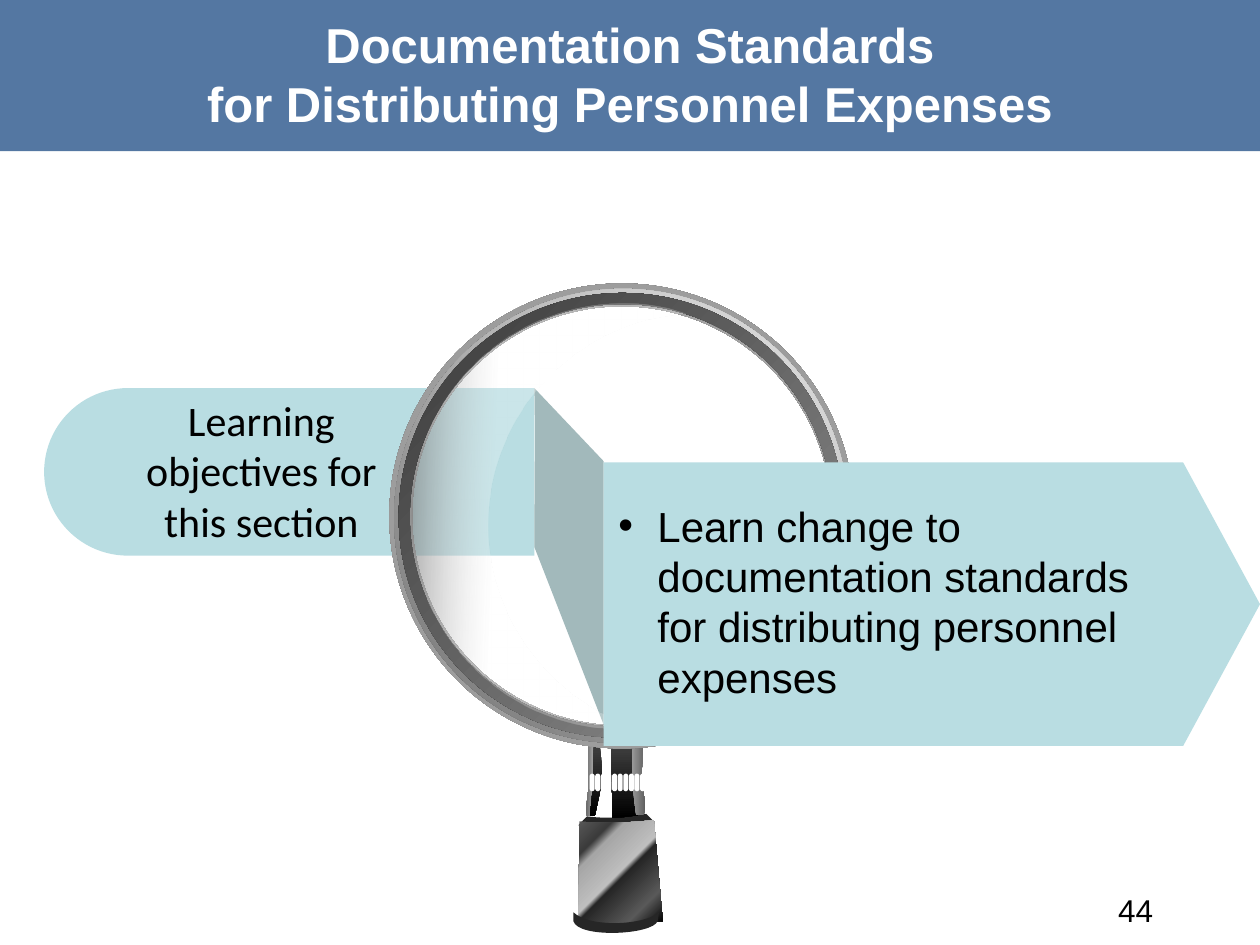
from dataclasses import dataclass
from typing import NamedTuple

from lxml import etree
from pptx import Presentation
from pptx import util as u
from pptx.dml import color
from pptx.enum import shapes, text
from pptx.oxml import ns

KIND = shapes.MSO_SHAPE
ALIGN = text.PP_ALIGN
ANCHOR = text.MSO_ANCHOR
GRID = 1000


@dataclass(frozen=True)
class Theme:
    banner: str = "376092"
    panel: str = "B9DDE2"
    fold: str = "A2B9BB"
    cap: str = "262626"
    white: str = "FFFFFF"
    ink: str = "000000"
    sans: str = "Arial"
    label: str = "Calibri"
    head: int = 28
    body: int = 24
    small: int = 18


class Stop(NamedTuple):
    pos: int
    tone: str
    alpha: int = 100


class Fade(NamedTuple):
    stops: tuple
    angle: float = 0
    focus: tuple = ()


class Box(NamedTuple):
    left: float
    top: float
    width: float
    height: float


class Ring(NamedTuple):
    box: Box
    band: float
    fill: Fade


class Part(NamedTuple):
    start: tuple
    steps: tuple
    fill: object


class Label(NamedTuple):
    words: str
    box: Box
    size: int
    face: str
    tone: str
    align: object
    anchor: object = ANCHOR.TOP
    bold: bool = False
    grow: bool = False
    bullet: bool = False


T = Theme()
DARK = Fade((Stop(0, "404040"), Stop(100, "000000")), 90)
STEEL = Fade((Stop(0, "595959"), Stop(19, "3B3B3B"), Stop(26, "A6A6A6"), Stop(50, "BFBFBF"),
              Stop(54, "262626"), Stop(81, "595959"), Stop(100, "000000")), 45)

FOLD = Part((4.24, 3.08), ((4.79, 3.66), (4.79, 5.75), (4.24, 4.34),
                           (4.24, 4.11, 4.25, 3.31, 4.24, 3.08)), T.fold)
HANDLE = (
    Part((4.66, 6.48), ((4.82, 6.5, 4.94, 6.49, 5.13, 6.46), (5.16, 6.49, 5.16, 6.49, 5.19, 6.52),
                        (5, 6.6, 4.76, 6.62, 4.59, 6.55)), T.cap),
    Part((4.85, 5.91), ((5.03, 5.9), (5.01, 6.15, 5.03, 6.29, 5.06, 6.47),
                        (5, 6.48, 4.92, 6.49, 4.86, 6.49), (4.86, 6.3, 4.85, 6.09, 4.85, 5.91)), DARK),
    Part((4.67, 5.9), ((4.68, 5.9, 4.7, 5.9, 4.71, 5.9), (4.71, 6.26, 4.7, 6.37, 4.68, 6.48),
                       (4.66, 6.48), (4.64, 6.41, 4.68, 6.26, 4.67, 6.2)),
         Fade((Stop(0, "A6A6A6"), Stop(100, "595959")), 180)),
    Part((4.71, 5.9), ((4.76, 5.9), (4.79, 6.2, 4.78, 6.2, 4.72, 6.48), (4.68, 6.48),
                       (4.71, 6.27, 4.71, 6.12, 4.71, 5.9)), DARK),
    Part((5.02, 5.9), ((5.1, 5.9), (5.1, 6.03, 5.1, 6.11, 5.08, 6.19),
                       (5.11, 6.27, 5.13, 6.41, 5.11, 6.46), (5.05, 6.47),
                       (5.02, 6.25, 5.01, 6.16, 5.02, 5.9)),
         Fade((Stop(0, "9C9C9C"), Stop(100, "5A5A5A")))),
    Part((5.26, 7.31), ((5.12, 7.32, 5.05, 7.32, 4.92, 7.33), (4.81, 7.32, 4.69, 7.32, 4.59, 7.3),
                        (4.6, 6.52), (4.7, 6.53, 4.8, 6.53, 4.87, 6.53),
                        (4.95, 6.53, 5.07, 6.52, 5.19, 6.51)), STEEL),
    Part((4.55, 7.31), ((4.55, 7.24), (4.69, 7.37, 5.12, 7.34, 5.23, 7.24), (5.22, 7.31),
                        (5.18, 7.42, 4.59, 7.45, 4.55, 7.31)), T.cap),
)
RINGS = (
    Ring(Box(3.09, 2.25, 3.69, 3.69), 0.049,
         Fade((Stop(0, "A5A5A5"), Stop(0, "DEDEDE"), Stop(100, "5A5A5A")), focus=(50, 50, 50, 50))),
    Ring(Box(3.12, 2.3, 3.62, 3.59), 0.033, Fade((Stop(0, "5A5A5A"), Stop(100, "FFFFFF")))),
    Ring(Box(3.16, 2.33, 3.54, 3.52), 0.025,
         Fade((Stop(0, "A5A5A5"), Stop(100, "262626")), focus=(100, 100, 0, 0))),
)
GLARE = Part((4.99, 2.41), ((5.1, 2.41, 5.21, 2.43, 5.31, 2.45), (5.44, 2.49),
                            (5.12, 2.51, 4.8, 2.62, 4.52, 2.84), (3.79, 3.41, 3.65, 4.47, 4.23, 5.2),
                            (4.45, 5.48, 4.74, 5.67, 5.03, 5.77), (4.9, 5.78),
                            (4.41, 5.77, 3.95, 5.56, 3.61, 5.13), (3.04, 4.4, 3.17, 3.34, 3.91, 2.76),
                            (4.23, 2.51, 4.61, 2.4, 4.99, 2.41)),
             Fade((Stop(63, "FFFFFF", 24), Stop(90, "808080", 64)), 182))

TITLE = Label("Documentation Standards\vfor Distributing Personnel Expenses", Box(0, 0, 10, 1.17),
              T.head, T.sans, T.white, ALIGN.CENTER, ANCHOR.MIDDLE, bold=True)
PAGE = Label("44", Box(6.92, 7.02, 2.33, 0.4), T.small, T.sans, T.ink, ALIGN.RIGHT, ANCHOR.MIDDLE)
TOPIC = Label("Learning objectives for this section", Box(0.91, 3.08, 2.33, 1.31),
              T.body, T.label, T.ink, ALIGN.CENTER, grow=True)
GOAL = Label("Learn change to documentation standards for distributing personnel expenses",
             Box(4.81, 3.92, 4.6, 1.72), T.body, T.sans, T.ink, ALIGN.LEFT, grow=True, bullet=True)


def add(node, tag: str, **attrs):
    return etree.SubElement(node, ns.qn(tag), {k: str(v) for k, v in attrs.items()})


def paint(shape, fill) -> None:
    shape.shadow.inherit = False
    shape.line.fill.background()
    if isinstance(fill, str):
        shape.fill.solid()
        shape.fill.fore_color.rgb = color.RGBColor.from_string(fill)
        return
    shape.fill.gradient()
    grad = shape._element.spPr.find(ns.qn("a:gradFill"))
    for child in list(grad):
        grad.remove(child)
    grad.set("rotWithShape", "1")
    stops = add(grad, "a:gsLst")
    for stop in fill.stops:
        tone = add(add(stops, "a:gs", pos=stop.pos * 1000), "a:srgbClr", val=stop.tone)
        if stop.alpha < 100:
            add(tone, "a:alpha", val=stop.alpha * 1000)
    if fill.focus:
        sides = {k: v * 1000 for k, v in zip("ltrb", fill.focus)}
        add(add(grad, "a:path", path="circle"), "a:fillToRect", **sides)
    else:
        add(grad, "a:lin", ang=int(fill.angle * 60000), scaled=0)


def draw(slide, kind, box: Box, fill, turn: float = 0, adjust: tuple = ()):
    shape = slide.shapes.add_shape(kind, *map(u.Inches, box))
    shape.rotation = turn
    for i, value in enumerate(adjust):
        shape.adjustments[i] = value
    paint(shape, fill)
    return shape


def trace(slide, part: Part) -> None:
    spots = [(s[i] * GRID, s[i + 1] * GRID) for s in part.steps for i in range(0, len(s), 2)]
    pen = slide.shapes.build_freeform(*(v * GRID for v in part.start), scale=u.Inches(1) / GRID)
    pen.add_line_segments(spots, close=True)
    shape = pen.convert_to_shape()
    lines = iter(list(shape._element.iter(ns.qn("a:lnTo"))))
    for step in part.steps:
        line = next(lines)
        if len(step) == 6:
            line.tag = ns.qn("a:cubicBezTo")
            for _ in range(2):
                knot = next(lines)
                line.append(knot[0])
                knot.getparent().remove(knot)
    paint(shape, part.fill)


def write(slide, label: Label) -> None:
    frame = slide.shapes.add_textbox(*map(u.Inches, label.box)).text_frame
    frame.word_wrap = True
    frame.vertical_anchor = label.anchor
    if label.grow:
        frame.auto_size = text.MSO_AUTO_SIZE.SHAPE_TO_FIT_TEXT
    para = frame.paragraphs[0]
    para.text = label.words
    para.alignment = label.align
    if label.bullet:
        props = para._p.get_or_add_pPr()
        props.set("marL", str(u.Inches(0.31)))
        props.set("indent", str(u.Inches(-0.31)))
        add(props, "a:buFont", typeface=label.face)
        add(props, "a:buChar", char="•")
    font = para.font
    font.name, font.size, font.bold = label.face, u.Pt(label.size), label.bold
    font.color.rgb = color.RGBColor.from_string(label.tone)


def main() -> None:
    deck = Presentation()
    deck.slide_width, deck.slide_height = u.Inches(10), u.Inches(7.5)
    slide = deck.slides.add_slide(deck.slide_layouts[6])

    banner = draw(slide, KIND.RECTANGLE, Box(-0.01, 0, 10.01, 1.2), T.banner)
    add(banner._element.spPr.find(ns.qn("a:solidFill"))[0], "a:alpha", val=85000)
    write(slide, TITLE)
    write(slide, PAGE)
    draw(slide, KIND.ROUND_2_SAME_RECTANGLE, Box(1.63, 1.8, 1.33, 3.89), T.panel, 270, (0.5, 0))
    trace(slide, FOLD)
    write(slide, TOPIC)
    for part in HANDLE:
        trace(slide, part)
    for i in range(10):
        draw(slide, KIND.ROUNDED_RECTANGLE, Box(4.68 + i * 0.4 / 9, 6.14, 0.04, 0.14), T.white,
             adjust=(0.5,))
    for ring in RINGS:
        draw(slide, KIND.DONUT, ring.box, ring.fill, 315, (ring.band,))
    trace(slide, GLARE)
    draw(slide, KIND.PENTAGON, Box(4.79, 3.67, 5.21, 2.25), T.panel, adjust=(0.271,))
    write(slide, GOAL)
    deck.save("out.pptx")


if __name__ == "__main__":
    main()
